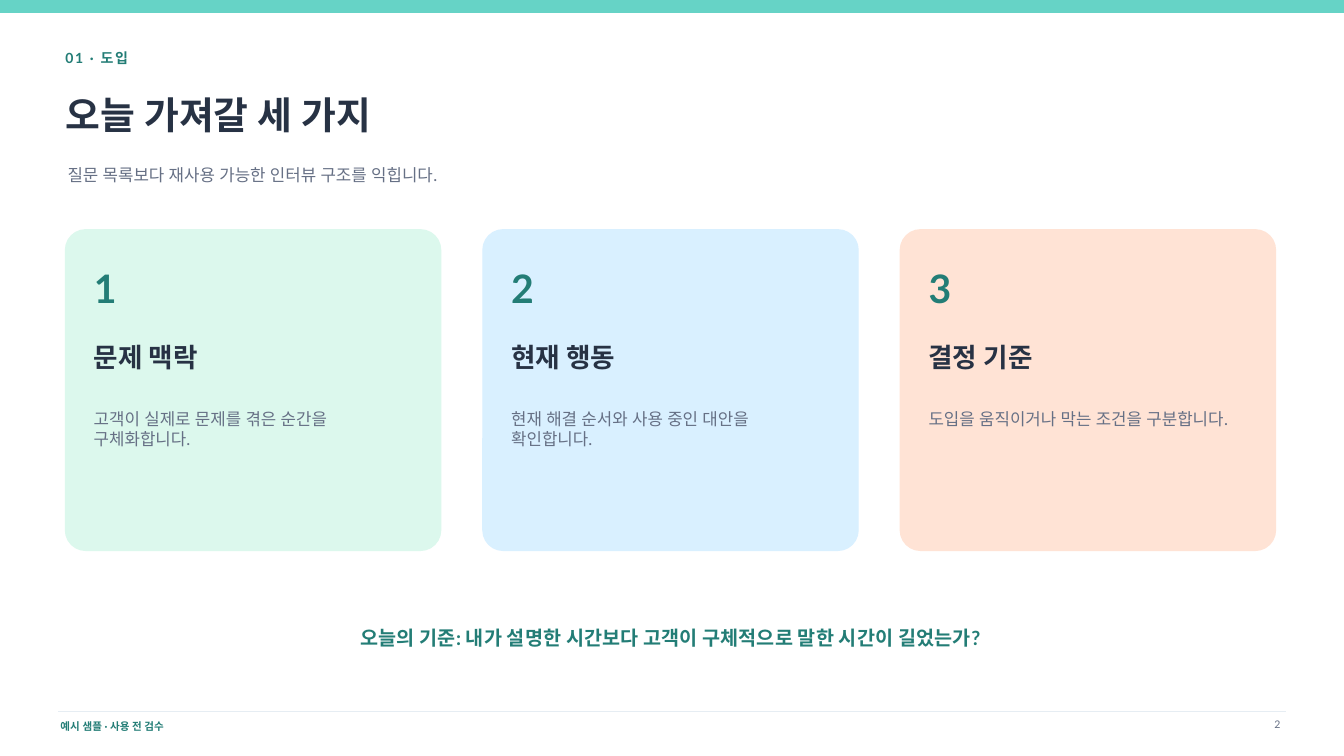
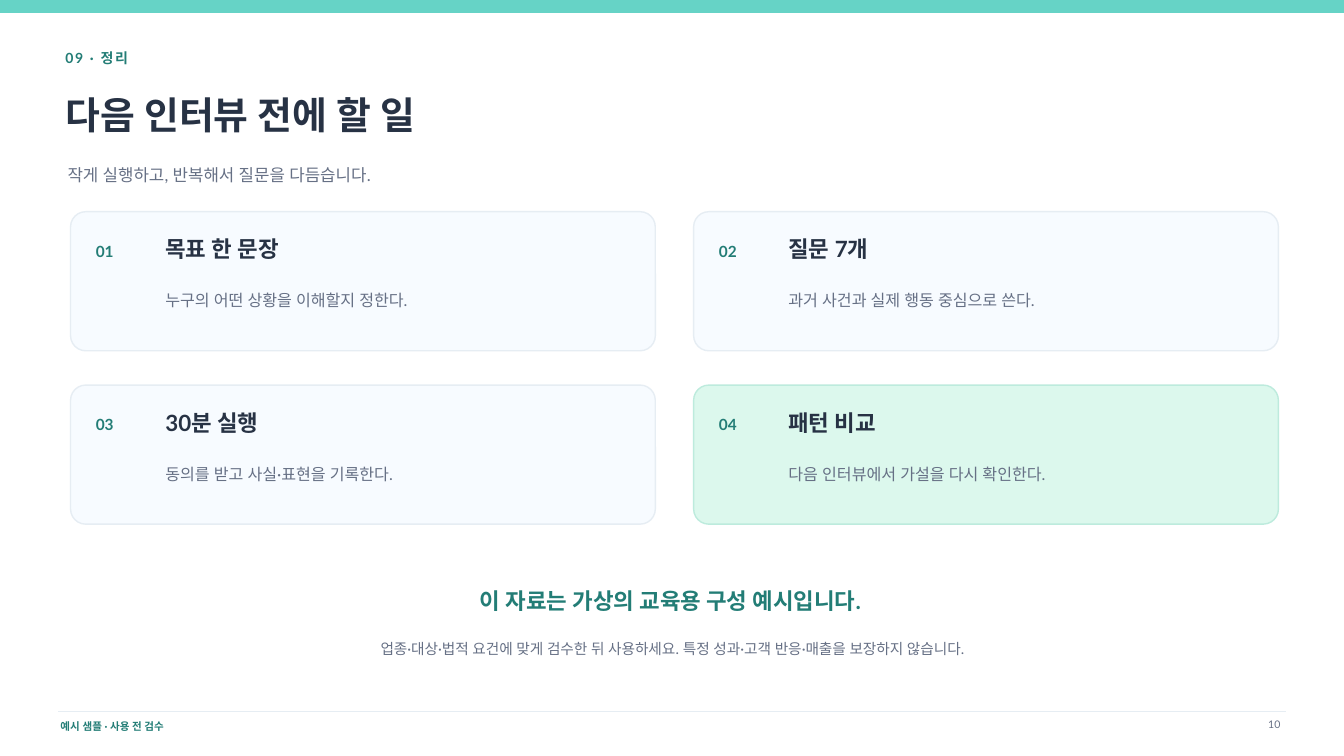
from lxml.etree import SubElement
from pptx import Presentation
from pptx.dml.color import RGBColor
from pptx.enum.shapes import MSO_CONNECTOR, MSO_SHAPE
from pptx.enum.text import MSO_ANCHOR, MSO_AUTO_SIZE, PP_ALIGN
from pptx.oxml.ns import qn
from pptx.util import Inches, Pt

FONT = "Lato"
WIDTH, HEIGHT = 13.33, 7.5
LEFT = 0.65

AQUA = RGBColor(0x66, 0xD3, 0xC6)
TEAL = RGBColor(0x23, 0x7D, 0x76)
INK = RGBColor(0x27, 0x32, 0x44)
GRAY = RGBColor(0x66, 0x70, 0x85)
RULE = RGBColor(0xE6, 0xED, 0xF3)
MINT = RGBColor(0xDC, 0xF8, 0xED)
MINT_EDGE = RGBColor(0xBD, 0xEB, 0xDD)
SKY = RGBColor(0xD9, 0xF0, 0xFF)
PEACH = RGBColor(0xFF, 0xE3, 0xD5)
PALE = RGBColor(0xF7, 0xFB, 0xFF)

FOOTER = "예시 샘플 · 사용 전 검수"

# Each card: number, heading, description, fill, edge
INTRO = {
    "number": "2",
    "section": "01 · 도입",
    "title": "오늘 가져갈 세 가지",
    "subtitle": "질문 목록보다 재사용 가능한 인터뷰 구조를 익힙니다.",
    "cards": [
        ("1", "문제 맥락", "고객이 실제로 문제를 겪은 순간을 구체화합니다.", MINT, MINT),
        ("2", "현재 행동", "현재 해결 순서와 사용 중인 대안을 확인합니다.", SKY, SKY),
        ("3", "결정 기준", "도입을 움직이거나 막는 조건을 구분합니다.", PEACH, PEACH),
    ],
    "closing": [
        ("오늘의 기준: 내가 설명한 시간보다 고객이 구체적으로 말한 시간이 길었는가?",
         (0.8, 6.16, 11.7, 0.34), 14, TEAL, True),
    ],
}
WRAP_UP = {
    "number": "10",
    "section": "09 · 정리",
    "title": "다음 인터뷰 전에 할 일",
    "subtitle": "작게 실행하고, 반복해서 질문을 다듬습니다.",
    "cards": [
        ("01", "목표 한 문장", "누구의 어떤 상황을 이해할지 정한다.", PALE, RULE),
        ("02", "질문 7개", "과거 사건과 실제 행동 중심으로 쓴다.", PALE, RULE),
        ("03", "30분 실행", "동의를 받고 사실·표현을 기록한다.", PALE, RULE),
        ("04", "패턴 비교", "다음 인터뷰에서 가설을 다시 확인한다.", MINT, MINT_EDGE),
    ],
    "closing": [
        ("이 자료는 가상의 교육용 구성 예시입니다.",
         (0.8, 5.78, 11.7, 0.35), 16, TEAL, True),
        ("업종·대상·법적 요건에 맞게 검수한 뒤 사용하세요. "
         "특정 성과·고객 반응·매출을 보장하지 않습니다.",
         (1.02, 6.24, 11.3, 0.39), 10.5, GRAY, False),
    ],
}

# Part boxes are offsets from the card corner, then size, colour, bold, anchor
TALL_CARDS = {
    "columns": 3, "origin": (LEFT, 2.28), "size": (3.72, 3.18), "gap": (0.42, 0),
    "parts": [
        ((0.28, 0.3, 0.55, 0.55), 28, TEAL, True, MSO_ANCHOR.MIDDLE),
        ((0.28, 1.07, 3.05, 0.38), 19, INK, True, MSO_ANCHOR.MIDDLE),
        ((0.28, 1.77, 3.03, 0.92), 12, GRAY, False, MSO_ANCHOR.TOP),
    ],
}
WIDE_CARDS = {
    "columns": 2, "origin": (0.7, 2.1), "size": (5.8, 1.38), "gap": (0.38, 0.34),
    "parts": [
        ((0.25, 0.28, 0.55, 0.23), 11, TEAL, True, MSO_ANCHOR.MIDDLE),
        ((0.94, 0.22, 2, 0.3), 16, INK, True, MSO_ANCHOR.MIDDLE),
        ((0.94, 0.7, 4.35, 0.36), 11.5, GRAY, False, MSO_ANCHOR.MIDDLE),
    ],
}
CORNER = {3: 0.063, 2: 0.109}


def inches(box):
    return [Inches(v) for v in box]


def write(sp, text, size, color, bold=False, anchor=MSO_ANCHOR.MIDDLE,
          align=PP_ALIGN.LEFT, spacing=0):
    tf = sp.text_frame
    tf.word_wrap = True
    tf.auto_size = MSO_AUTO_SIZE.NONE
    tf.vertical_anchor = anchor
    tf.margin_left = tf.margin_right = tf.margin_top = tf.margin_bottom = 0
    p = tf.paragraphs[0]
    p.alignment = align
    r = p.add_run()
    r.text = text
    r.font.size, r.font.bold, r.font.name = Pt(size), bold, FONT
    r.font.color.rgb = color
    rPr = r._r.get_or_add_rPr()
    for tag in ("a:ea", "a:cs"):
        SubElement(rPr, qn(tag)).set("typeface", FONT)
    if spacing:
        rPr.set("spc", str(round(spacing * 100)))


def add_text(slide, box, *args, **style):
    sp = slide.shapes.add_textbox(*inches(box))
    write(sp, *args, **style)
    return sp


def add_panel(slide, kind, box, fill, edge):
    sp = slide.shapes.add_shape(kind, *inches(box))
    sp.shadow.inherit = False
    sp.fill.solid()
    sp.fill.fore_color.rgb = fill
    sp.line.color.rgb = edge
    sp.line.width = Pt(1)
    return sp


def furnish_layout(layout, slide):
    """Draw band, rule and footer on the slide, then move them to its layout."""
    band = add_panel(slide, MSO_SHAPE.RECTANGLE, (0, 0, WIDTH, 0.12), AQUA, AQUA)
    rule = slide.shapes.add_connector(
        MSO_CONNECTOR.STRAIGHT, *inches((0.58, 7.06, 12.75, 7.06)))
    rule.line.color.rgb = RULE
    rule.line.width = Pt(1)
    SubElement(rule.element.spPr, qn("a:effectLst"))
    footer = add_text(slide, (0.6, 7.12, 4.2, 0.18), FOOTER, 7.5, TEAL, True)
    for sp in (band, rule, footer):
        layout.shapes.element.append(sp.element)


def add_cards(slide, cards, grid):
    (x0, y0), (w, h), (gap_x, gap_y) = grid["origin"], grid["size"], grid["gap"]
    for i, (*texts, fill, edge) in enumerate(cards):
        row, col = divmod(i, grid["columns"])
        x, y = x0 + col * (w + gap_x), y0 + row * (h + gap_y)
        card = add_panel(slide, MSO_SHAPE.ROUNDED_RECTANGLE, (x, y, w, h), fill, edge)
        card.adjustments[0] = CORNER[grid["columns"]]
        for text, ((dx, dy, tw, th), *style) in zip(texts, grid["parts"]):
            add_text(slide, (x + dx, y + dy, tw, th), text, *style)


def fill_slide(slide, content, grid):
    add_text(slide, (LEFT, 0.43, 4.9, 0.28), content["section"], 10, TEAL, True,
             spacing=1.2)
    write(slide.shapes.title, content["title"], 27, INK, True)
    add_text(slide, (0.67, 1.52, 11.8, 0.42), content["subtitle"], 12, GRAY)
    add_cards(slide, content["cards"], grid)
    for text, box, *style in content["closing"]:
        add_text(slide, box, text, *style, align=PP_ALIGN.CENTER)
    add_text(slide, (12.2, 7.12, 0.5, 0.18), content["number"], 7.5, GRAY,
             anchor=MSO_ANCHOR.TOP, align=PP_ALIGN.RIGHT)


def main():
    prs = Presentation()
    prs.slide_width, prs.slide_height = inches((WIDTH, HEIGHT))
    layout = prs.slide_layouts.get_by_name("Title Only")
    for ph in list(layout.placeholders):
        if ph.placeholder_format.idx:
            ph.element.getparent().remove(ph.element)
    title = layout.placeholders[0]
    title.left, title.top, title.width, title.height = inches((LEFT, 0.82, 12, 0.62))

    slides = [prs.slides.add_slide(layout) for _ in range(2)]
    furnish_layout(layout, slides[0])
    fill_slide(slides[0], INTRO, TALL_CARDS)
    fill_slide(slides[1], WRAP_UP, WIDE_CARDS)
    prs.save("out.pptx")


if __name__ == "__main__":
    main()
